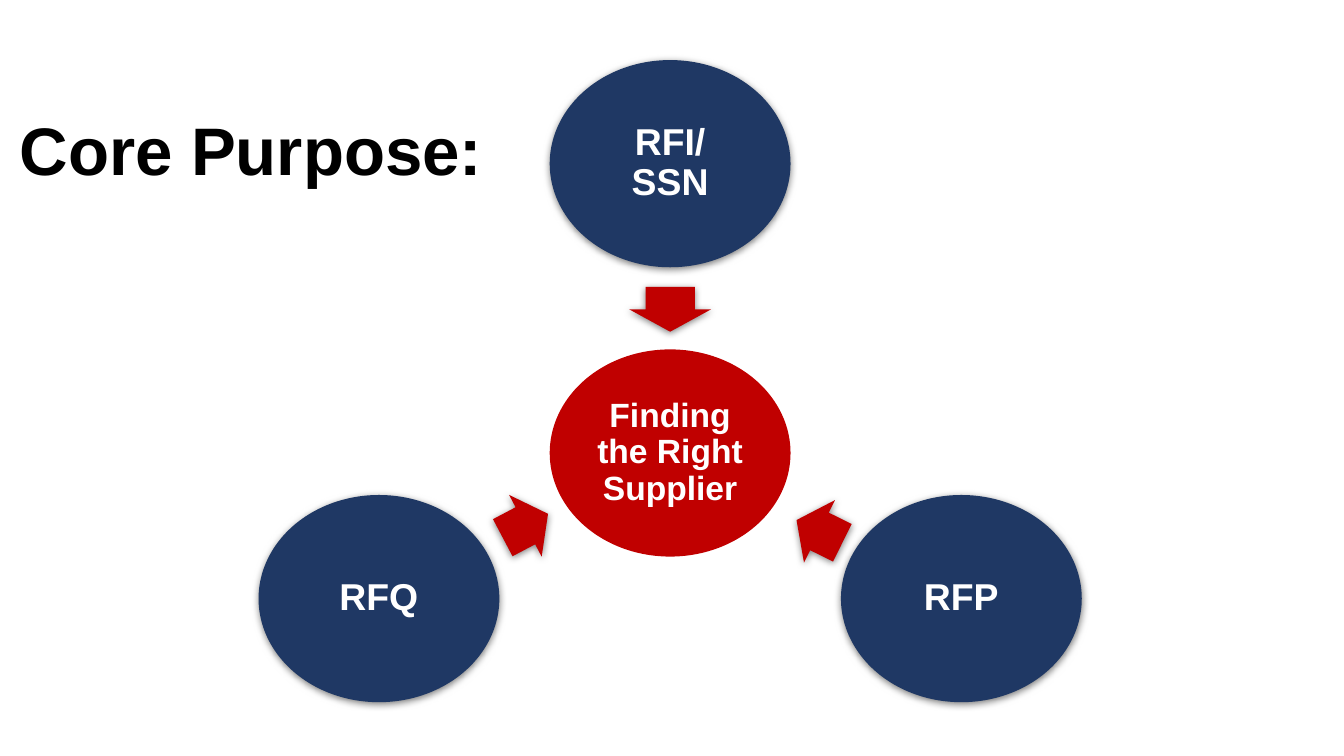
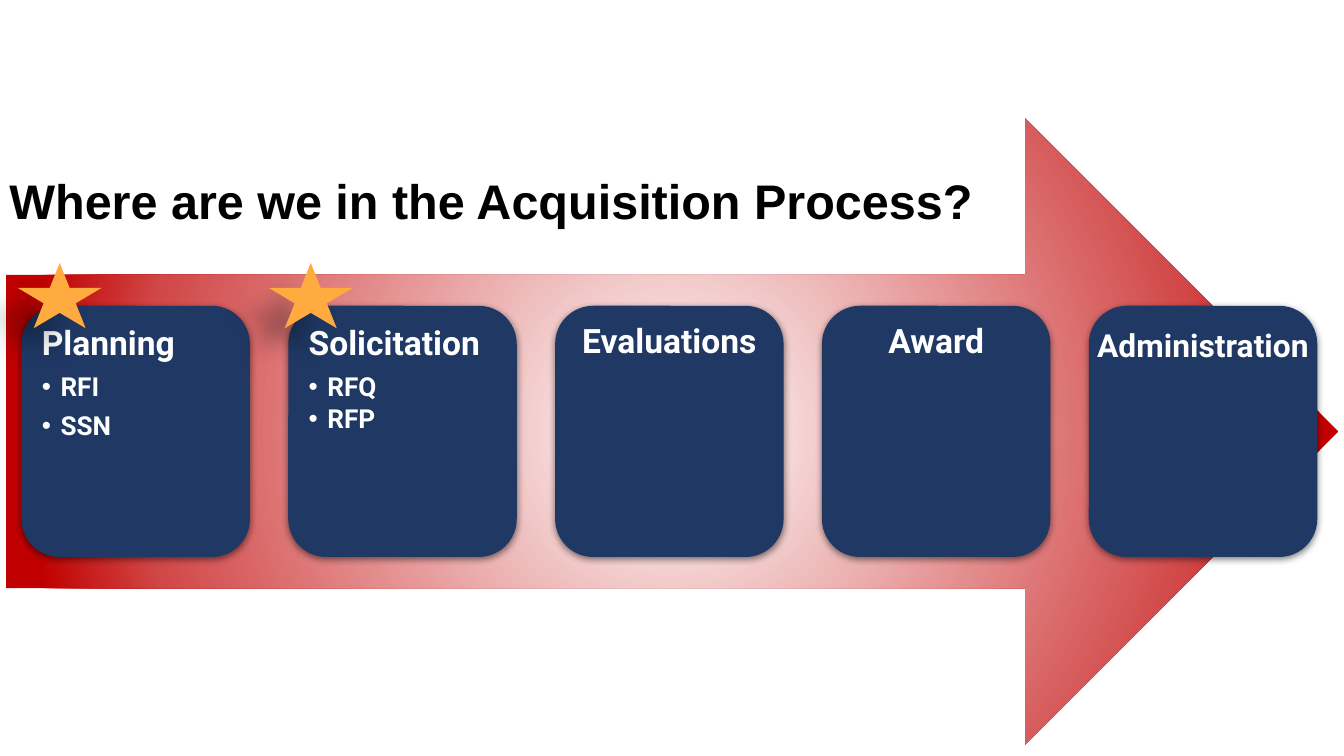
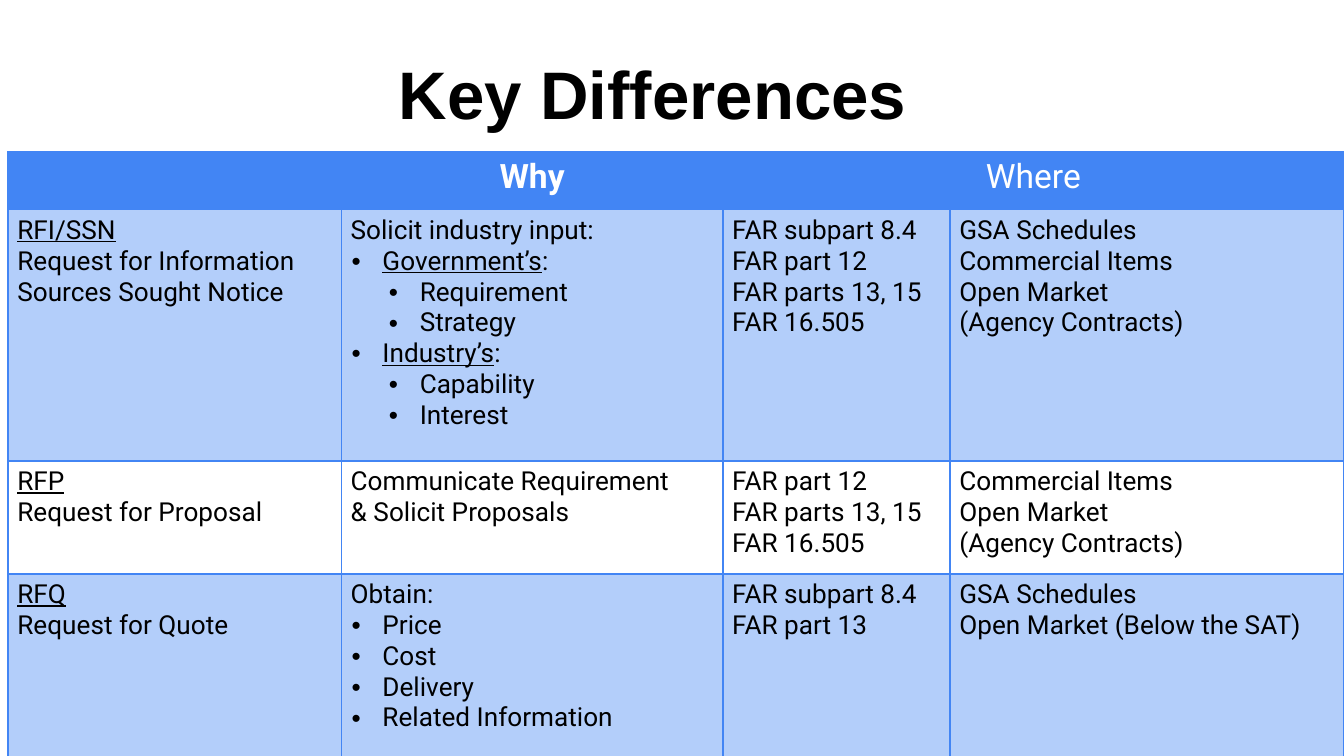
import lxml.etree
import pptx
import pptx.dml.color
import pptx.enum.shapes
import pptx.enum.text
import pptx.oxml.ns
import pptx.util

Pt = pptx.util.Pt
qn = pptx.oxml.ns.qn
SHAPE = pptx.enum.shapes.MSO_SHAPE
ALIGN = pptx.enum.text.PP_ALIGN
ANCHOR = pptx.enum.text.MSO_ANCHOR

COLORS = {
    "navy": "1F3864", "red": "C00000", "rose": "D24848", "star": "FFAB40",
    "blue": "4285F4", "black": "000000", "white": "FFFFFF",
}
SOFT_SHADOW = {"opacity": 49, "blur": 4, "distance": 1, "angle": 90}
STAR_SHADOW = {"opacity": 27, "blur": 11.8, "distance": 19.7, "angle": 141}
TITLE_FONT = {"name": "Arial", "size": Pt(36), "bold": True}

# name, circle offset from the hub centre, arrow offset, arrow size, arrow rotation
REQUESTS = [
    (["RFI/", "SSN"], (0, -155), (0, -77), (24, 44), 90),
    (["RFP"], (156, 78), (80, 42), (27.4, 37.4), 206.3),
    (["RFQ"], (-156, 78), (-77.5, 39), (27.4, 37.4), 332.2),
]

# phase, request types made in it, space before each of them
PHASES = [
    ("Planning", ["RFI", "SSN"], [6, 6]),
    ("Solicitation", ["RFQ", "RFP"], [6, 2]),
    ("Evaluations", [], []),
    ("Award", [], []),
    ("Administration", [], []),
]

# A leading ">" is one bullet level; text between underscores is underlined.
DIFFERENCES = [
    [
        ["_RFI/SSN_", "Request for Information", "Sources Sought Notice"],
        ["Solicit industry input:", ">_Government’s_:", ">>Requirement", ">>Strategy",
         ">_Industry’s_:", ">>Capability", ">>Interest"],
        ["FAR subpart 8.4", "FAR part 12", "FAR parts 13, 15", "FAR 16.505"],
        ["GSA Schedules", "Commercial Items", "Open Market", "(Agency Contracts)"],
    ],
    [
        ["_RFP_", "Request for Proposal"],
        ["Communicate Requirement", "& Solicit Proposals"],
        ["FAR part 12", "FAR parts 13, 15", "FAR 16.505"],
        ["Commercial Items", "Open Market", "(Agency Contracts)"],
    ],
    [
        ["_RFQ_", "Request for Quote"],
        ["Obtain:", ">Price", ">Cost", ">Delivery", ">Related Information"],
        ["FAR subpart 8.4", "FAR part 13"],
        ["GSA Schedules", "Open Market (Below the SAT)"],
    ],
]
COLUMN_WIDTHS = [178.6, 204.4, 121.7, 211]
ROW_HEIGHTS = [31, 134.6, 60.5, 98]


def rgb(color):
    return pptx.dml.color.RGBColor.from_string(COLORS[color])


def set_attributes(target, values):
    for name, value in values.items():
        setattr(target, name, value)


def add_xml(parent, tag, **attributes):
    texts = {name: str(value) for name, value in attributes.items()}
    return lxml.etree.SubElement(parent, qn(tag), texts)


def add_color(parent, color, opacity=100):
    node = add_xml(parent, "a:srgbClr", val=COLORS[color])
    if opacity < 100:
        add_xml(node, "a:alpha", val=opacity * 1000)


def set_frame(frame, inset, **values):
    sides = ("left", "top", "right", "bottom")
    set_attributes(frame, {f"margin_{side}": Pt(inset) for side in sides})
    set_attributes(frame, {"word_wrap": True, **values})


def add_bullet(para, left, hanging, color):
    properties = para._p.get_or_add_pPr()
    properties.set("marL", str(Pt(left)))
    properties.set("indent", str(-Pt(hanging)))
    add_color(add_xml(properties, "a:buClr"), color)
    add_xml(properties, "a:buFont", typeface="Arial")
    add_xml(properties, "a:buChar", char="•")


def next_para(frame, **values):
    """Return the empty first paragraph, or a new one once that has text."""
    first = frame.paragraphs[0]
    para = frame.add_paragraph() if first.runs else first
    set_attributes(para, values)
    return para


def add_span(para, text, color, **font):
    span = para.add_run()
    span.text = text
    set_attributes(span.font, font)
    span.font.color.rgb = rgb(color)


def add_figure(page, kind, box, color, shadow=None):
    shape = page.shapes.add_shape(kind, *map(Pt, box))
    shape.fill.solid()
    shape.fill.fore_color.rgb = rgb(color)
    shape.line.fill.background()
    shape.shadow.inherit = False
    if shadow:
        effects = shape._element.spPr.find(qn("a:effectLst"))
        outer = add_xml(effects, "a:outerShdw", blurRad=Pt(shadow["blur"]),
                        dist=Pt(shadow["distance"]), dir=shadow["angle"] * 60000,
                        algn="ctr", rotWithShape=0)
        add_color(outer, "black", shadow["opacity"])
    return shape


def add_page(deck, title, box, align=ALIGN.CENTER, size=36):
    page = deck.slides.add_slide(deck.slide_layouts[5])
    holder = page.shapes.title
    set_attributes(holder, dict(zip(("left", "top", "width", "height"), map(Pt, box))))
    set_frame(holder.text_frame, 5, vertical_anchor=ANCHOR.TOP,
              auto_size=pptx.enum.text.MSO_AUTO_SIZE.NONE)
    para = next_para(holder.text_frame, alignment=align)
    add_span(para, title, "black", **{**TITLE_FONT, "size": Pt(size)})
    return page


def centered_box(center, offset, size):
    return [center[i] + offset[i] - size[i] / 2 for i in (0, 1)] + list(size)


def add_circle(page, box, lines, color, size, shadow=None):
    circle = add_figure(page, SHAPE.OVAL, box, color, shadow)
    set_frame(circle.text_frame, 2, vertical_anchor=ANCHOR.MIDDLE)
    for line in lines:
        para = next_para(circle.text_frame, alignment=ALIGN.CENTER, line_spacing=0.9)
        add_span(para, line, "white", name="Arial", size=Pt(size), bold=True)


def add_hub(page, center, size):
    """Draw a hub circle with the requests around it pointing inwards."""
    add_circle(page, centered_box(center, (0, 0), size),
               ["Finding the Right Supplier"], "red", 18)
    for lines, circle_offset, arrow_offset, arrow_size, rotation in REQUESTS:
        arrow = add_figure(page, SHAPE.RIGHT_ARROW,
                           centered_box(center, arrow_offset, arrow_size), "red", SOFT_SHADOW)
        arrow.rotation = rotation
        arrow.adjustments[0] = 0.6
        add_circle(page, centered_box(center, circle_offset, size),
                   lines, "navy", 20, SOFT_SHADOW)


def fill_radial(shape, stops):
    shape.fill.gradient()
    gradient = shape._element.spPr.find(qn("a:gradFill"))
    for child in list(gradient):
        gradient.remove(child)
    stop_list = add_xml(gradient, "a:gsLst")
    for position, color in stops:
        add_color(add_xml(stop_list, "a:gs", pos=position * 1000), color)
    circle = add_xml(gradient, "a:path", path="circle")
    add_xml(circle, "a:fillToRect", l=50000, t=50000, r=50000, b=50000)


def add_phase(page, box, name, requests, gaps):
    card = add_figure(page, SHAPE.ROUNDED_RECTANGLE, box, "navy", SOFT_SHADOW)
    frame = card.text_frame
    is_long = len(name) > 12
    set_frame(frame, 5 if requests else 4.3, vertical_anchor=ANCHOR.TOP,
              word_wrap=not is_long)
    if is_long:
        frame.margin_top = Pt(7)
    align = ALIGN.LEFT if requests else ALIGN.CENTER
    font = {"name": "Roboto", "bold": True}
    para = next_para(frame, alignment=align, line_spacing=0.9)
    add_span(para, name, "white", size=Pt(17 if is_long else 18), **font)
    for request, gap in zip(requests, gaps):
        para = next_para(frame, alignment=align, line_spacing=0.9, space_before=Pt(gap))
        add_bullet(para, 10, 10, "white")
        add_span(para, request, "white", size=Pt(14), **font)


def add_process(page, box):
    left, top, width, height = box
    arrow = add_figure(page, SHAPE.RIGHT_ARROW, box, "red")
    fill_radial(arrow, [(0, "white"), (72, "rose"), (88, "red"), (100, "red")])
    card_width, card_height, pitch = 122.4, 134.6, 142.95
    card_top = top + (height - card_height) / 2
    for index, phase in enumerate(PHASES):
        add_phase(page, (left + 8.5 + index * pitch, card_top, card_width, card_height), *phase)
    for star_left in (6.5, 141):
        add_figure(page, SHAPE.STAR_5_POINT, (left + star_left, card_top - 23, 45, 35),
                   "star", STAR_SHADOW)


def style_cell(cell, color=None, opacity=100):
    set_attributes(cell, {"margin_left": Pt(5), "margin_right": Pt(5),
                          "margin_top": Pt(2.7), "margin_bottom": Pt(2.7)})
    properties = cell._tc.get_or_add_tcPr()
    for side in ("a:lnL", "a:lnR", "a:lnT", "a:lnB"):
        line = add_xml(properties, side, w=Pt(0.75))
        add_color(add_xml(line, "a:solidFill"), "blue")
    if color:
        add_color(add_xml(properties, "a:solidFill"), color, opacity)
    else:
        add_xml(properties, "a:noFill")


def write_cell(cell, lines):
    for line in lines:
        text = line.lstrip(">")
        level = len(line) - len(text)
        para = next_para(cell.text_frame)
        if level:
            add_bullet(para, 17 + 20 * (level - 1), 16.5, "black")
        for index, part in enumerate(text.split("_")):
            if part:
                add_span(para, part, "black", name="Roboto", size=Pt(14),
                         bold=False, underline=index % 2 == 1)


def add_differences(page, left, top):
    size = (sum(COLUMN_WIDTHS), sum(ROW_HEIGHTS))
    frame = page.shapes.add_table(len(ROW_HEIGHTS), len(COLUMN_WIDTHS),
                                  *map(Pt, (left, top, *size)))
    table = frame.table
    set_attributes(table, {"first_row": False, "horz_banding": False})
    for column, width in zip(table.columns, COLUMN_WIDTHS):
        column.width = Pt(width)
    for row, height in zip(table.rows, ROW_HEIGHTS):
        row.height = Pt(height)

    for cell in table.rows[0].cells:
        style_cell(cell, "blue")
    table.cell(0, 2).merge(table.cell(0, 3))
    for column, heading, bold in ((1, "Why", True), (2, "Where", False)):
        para = next_para(table.cell(0, column).text_frame, alignment=ALIGN.CENTER)
        add_span(para, heading, "white", name="Roboto", size=Pt(18), bold=bold)

    for row, contents in enumerate(DIFFERENCES, start=1):
        for column, lines in enumerate(contents):
            cell = table.cell(row, column)
            style_cell(cell, "blue" if row % 2 else None, 40)
            write_cell(cell, lines)


def main():
    deck = pptx.Presentation()
    set_attributes(deck, {"slide_width": Pt(720), "slide_height": Pt(405)})

    page = add_page(deck, "Core Purpose:", (-15, 53, 299, 55))
    add_hub(page, center=(359, 242.7), size=(129, 111))

    page = add_page(deck, "Where are we in the Acquisition Process?",
                    (0, 86.4, 541, 42.5), ALIGN.LEFT, 26)
    add_process(page, (3, 63.4, 714, 335.5))

    page = add_page(deck, "Key Differences", (4.3, 23, 690.5, 55))
    add_differences(page, 4.3, 81.4)

    deck.save("out.pptx")


if __name__ == "__main__":
    main()
